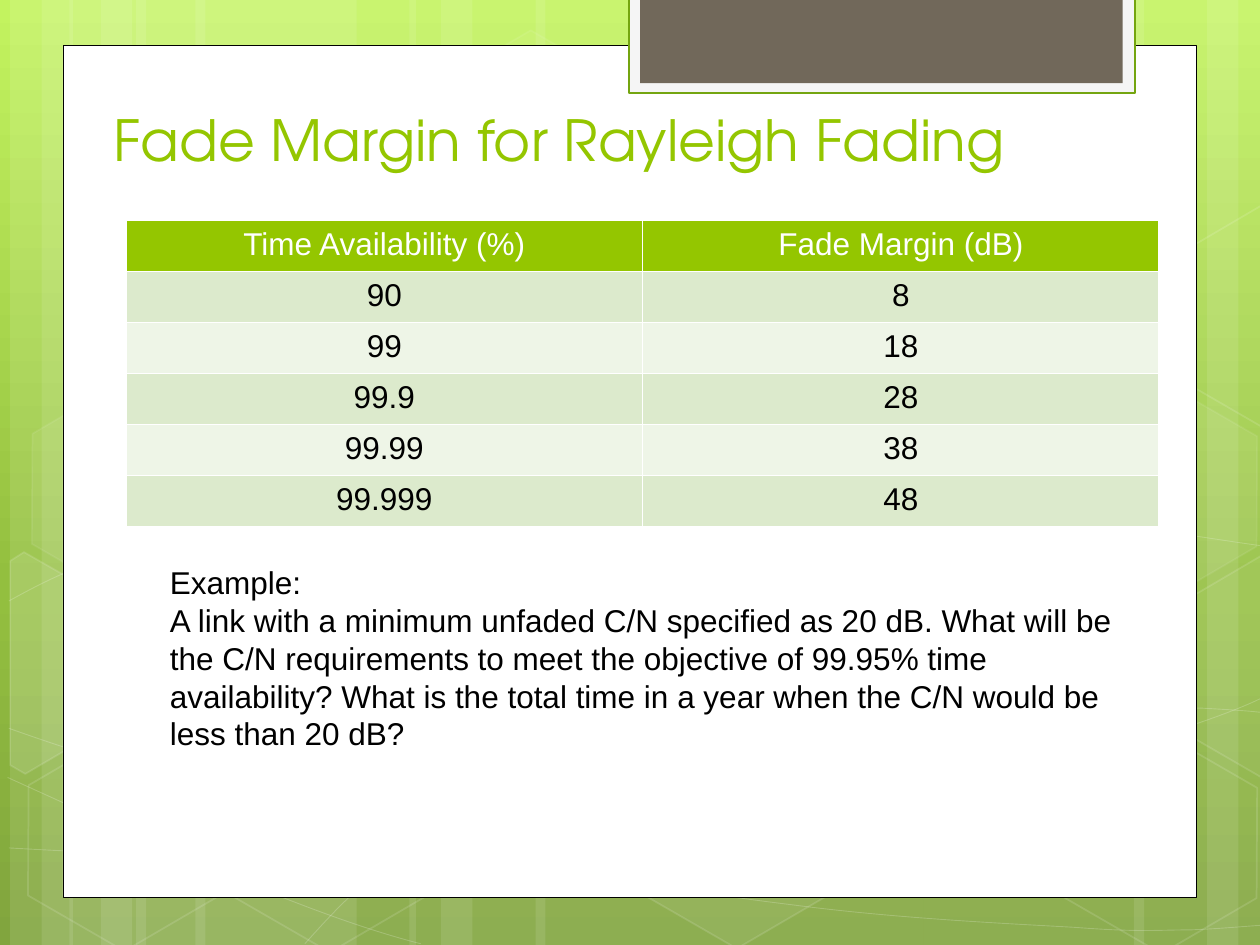
"""Build the slide about fade margin for Rayleigh fading."""
from copy import deepcopy
from math import cos, radians, sin

from lxml.etree import SubElement
from pptx import Presentation
from pptx.dml.color import RGBColor
from pptx.enum.shapes import MSO_SHAPE
from pptx.enum.text import MSO_ANCHOR, PP_ALIGN
from pptx.oxml.ns import qn
from pptx.util import Inches, Pt

COLORS = {
    "white": "FFFFFF", "black": "000000", "green": "94C600", "edge": "74A510",
    "tab": "F5F5F5", "brown": "71685A", "band": "DCEACC", "light band": "EEF5E7",
}
BACKDROP = [(0, "C3F35F"), (0.62, "93BF3F"), (1, "81A53E")]

TITLE = "Fade Margin for Rayleigh Fading"
ROWS = [
    ("Time Availability (%)", "Fade Margin (dB)"),
    ("90", "8"), ("99", "18"), ("99.9", "28"), ("99.99", "38"), ("99.999", "48"),
]
EXAMPLE = [
    "Example:",
    "A link with a minimum unfaded C/N specified as 20 dB. What will be the C/N "
    "requirements to meet the objective of 99.95% time availability? What is the "
    "total time in a year when the C/N would be less than 20 dB?",
]
TITLE_FONT = {"name": "TeX Gyre Adventor", "size": Pt(32.4)}
BODY_FONT = {"name": "Arial", "size": Pt(18), "bold": False}

STRIPES = [
    (1.08, 1.75), (0.08, 0.5), (0.33, 0.83), (1.55, 1.75), (0.55, 0.5), (0.8, 0.83),
    (7.33, 1.75), (9.58, 0.5), (9, 0.83), (4.25, 3.08), (3.25, 0.5), (3.5, 0.83),
]
CURVES = [
    [(0.07, 6.73), (0.61, 6.76), (1.15, 6.79), (1.9, 6.78), (2.65, 6.77), (3.58, 6.75),
     (4.58, 6.65), (5.58, 6.55), (7, 6.36), (7.92, 6.17), (8.83, 5.98), (9.77, 5.68),
     (10.07, 5.51)],
    [(0.07, 4.77), (0.36, 4.61), (0.65, 4.46), (1.21, 4.31), (1.78, 4.16), (2.59, 3.94),
     (3.47, 3.87), (4.36, 3.8), (5.44, 3.79), (6.54, 3.87), (7.64, 3.95), (9.47, 4.26),
     (10.07, 4.34)],
    [(0.06, 6.17), (1.27, 6.72), (2.47, 7.27), (3.34, 7.49)],
    [(0.07, 5.78), (0.38, 5.89), (0.7, 6), (1.28, 6.16), (1.86, 6.31), (2.73, 6.56),
     (3.57, 6.73), (4.4, 6.9), (5.45, 7.08), (6.28, 7.18), (7.11, 7.29), (8, 7.33),
     (8.53, 7.36), (9.05, 7.4), (9.19, 7.38), (9.45, 7.38), (9.71, 7.37), (9.89, 7.35),
     (10.07, 7.34)],
    [(2.42, 7.49), (2.6, 7.29), (2.78, 7.09), (3.02, 6.91), (3.26, 6.73), (3.6, 6.53),
     (3.88, 6.39), (4.16, 6.25), (4.33, 6.19), (4.7, 6.09), (5.06, 5.99), (5.73, 5.85),
     (6.08, 5.78), (6.44, 5.71), (6.49, 5.71), (6.8, 5.69), (7.11, 5.66), (7.6, 5.63),
     (7.94, 5.62), (8.29, 5.61), (8.86, 5.62), (8.86, 5.62), (9.08, 5.62), (9.31, 5.62),
     (9.53, 5.62), (9.71, 5.63), (9.88, 5.64), (9.97, 5.65), (10.06, 5.66), (10.03, 5.65),
     (10.06, 5.66)],
]
TILT = 30
HEXAGONS = [
    (3.34, 0.36, 4, 8), (4.97, 5.89, 6, 12), (0.11, 5.91, 0, 12), (0.14, 3.12, 7, 8),
    (1.74, 5.92, 0, 12), (7.53, 4.53, 10, 12), (8.34, 5.93, 0, 12), (8.34, 3.14, 7, 8),
]
CUT_HEXAGONS = [
    ((0.36, 5.35), 10, [(0.08, 4.45), (0.19, 4.38), (0.96, 4.82), (0.95, 5.7),
                        (0.2, 6.14), (0.08, 6.07)]),
    ((9.85, 5.2), 4, [(9.26, 4.85), (10.01, 4.41), (10.09, 4.46), (10.09, 6.13),
                      (10.02, 6.17), (9.26, 5.73)]),
    ((9.85, 2.41), 0, [(9.26, 2.07), (10.01, 1.63), (10.1, 1.68), (10.09, 3.35),
                       (10.02, 3.39), (9.26, 2.95)]),
]
PANELS = [
    ((0.5, 0.36, 9, 6.76), "white", ("black", 0.5)),
    ((4.99, -0.02, 4.02, 0.76), "tab", ("edge", 1.25)),
    ((5.08, -0.02, 3.83, 0.68), "brown", None),
]


def rgb(name):
    return RGBColor.from_string(COLORS[name])


def paint(fill, color, opacity=100):
    if not opacity:
        fill.background()
        return
    fill.solid()
    fill.fore_color.rgb = rgb(color)


def fade(parent, opacity):
    for color in parent.findall(qn("a:solidFill") + "/" + qn("a:srgbClr")):
        SubElement(color, qn("a:alpha"), val=str(opacity * 1000))


def style(shape, color, opacity=100, line=None, line_opacity=100):
    shape.shadow.inherit = False
    paint(shape.fill, color, opacity)
    fade(shape.element.spPr, opacity)
    if line is None:
        shape.line.fill.background()
        return
    paint(shape.line.fill, line[0])
    shape.line.width = Pt(line[1])
    fade(shape.element.spPr.find(qn("a:ln")), line_opacity)


def add_preset(page, kind, place):
    return page.shapes.add_shape(kind, *map(Inches, place))


def add_outline(page, points, close):
    points = [(Inches(x), Inches(y)) for x, y in points]
    builder = page.shapes.build_freeform(*points[0])
    builder.add_line_segments(points[1:], close=close)
    return builder.convert_to_shape()


def add_curve(page, points):
    """Draw cubic curves, three control points after the first for each."""
    curve = add_outline(page, points, False)
    segments = list(curve.element.iter(qn("a:lnTo")))
    outline = segments[0].getparent()
    for first in range(0, len(segments), 3):
        bend = SubElement(outline, qn("a:cubicBezTo"))
        for segment in segments[first:first + 3]:
            bend.append(segment[0])
            outline.remove(segment)
    return curve


def untilt(point, center):
    x, y = point[0] - center[0], point[1] - center[1]
    cosine, sine = cos(radians(TILT)), sin(radians(TILT))
    return center[0] + x * cosine + y * sine, center[1] - x * sine + y * cosine


def write(paragraph, text, font, color):
    span = paragraph.add_run()
    span.text = text
    for key, value in font.items():
        setattr(span.font, key, value)
    span.font.color.rgb = rgb(color)


def add_text(page, place, lines, font, color, anchor):
    frame = page.shapes.add_textbox(*map(Inches, place)).text_frame
    frame.word_wrap = True
    frame.vertical_anchor = anchor
    for index, line in enumerate(lines):
        paragraph = frame.add_paragraph() if index else frame.paragraphs[0]
        write(paragraph, line, font, color)


def add_margin_table(page):
    table = page.shapes.add_table(len(ROWS), 2, *map(Inches, (1, 1.75, 8.2, 2.43))).table
    for row, values in enumerate(ROWS):
        fill = "green" if row == 0 else "band" if row % 2 else "light band"
        for column, value in enumerate(values):
            cell = table.cell(row, column)
            paint(cell.fill, fill)
            paragraph = cell.text_frame.paragraphs[0]
            paragraph.alignment = PP_ALIGN.CENTER
            write(paragraph, value, BODY_FONT, "black" if row else "white")


def add_backdrop(page):
    fill = page.background.fill
    fill.gradient()
    fill.gradient_angle = 270
    stops = page.element.find(".//" + qn("a:gsLst"))
    stops.append(deepcopy(stops[0]))
    for stop, (position, color) in zip(fill.gradient_stops, BACKDROP):
        stop.position = position
        stop.color.rgb = RGBColor.from_string(color)
    for left, width in STRIPES:
        style(add_preset(page, MSO_SHAPE.RECTANGLE, (left, 0, width, 7.5)), "white", 10)
    for points in CURVES:
        style(add_curve(page, points), "white", 0, ("white", 0.5), 20)
    for left, top, opacity, line_opacity in HEXAGONS:
        hexagon = add_preset(page, MSO_SHAPE.HEXAGON, (left, top, 1.75, 1.52))
        hexagon.adjustments[0] = 0.285
        hexagon.rotation = TILT
        style(hexagon, "white", opacity, ("white", 1), line_opacity)
    for center, opacity, points in CUT_HEXAGONS:
        hexagon = add_outline(page, [untilt(point, center) for point in points], True)
        hexagon.rotation = TILT
        style(hexagon, "white", opacity, ("white", 1), 12)


def main():
    deck = Presentation()
    deck.slide_width, deck.slide_height = Inches(10), Inches(7.5)
    page = deck.slides.add_slide(deck.slide_layouts[6])
    add_backdrop(page)
    for place, color, line in PANELS:
        style(add_preset(page, MSO_SHAPE.RECTANGLE, place), color, line=line)
    add_text(page, (0.8, 0.84, 8.42, 0.58), [TITLE], TITLE_FONT, "green", MSO_ANCHOR.BOTTOM)
    add_margin_table(page)
    add_text(page, (1.25, 4.42, 7.83, 1.62), EXAMPLE, BODY_FONT, "black", MSO_ANCHOR.TOP)
    deck.save("out.pptx")


if __name__ == "__main__":
    main()
